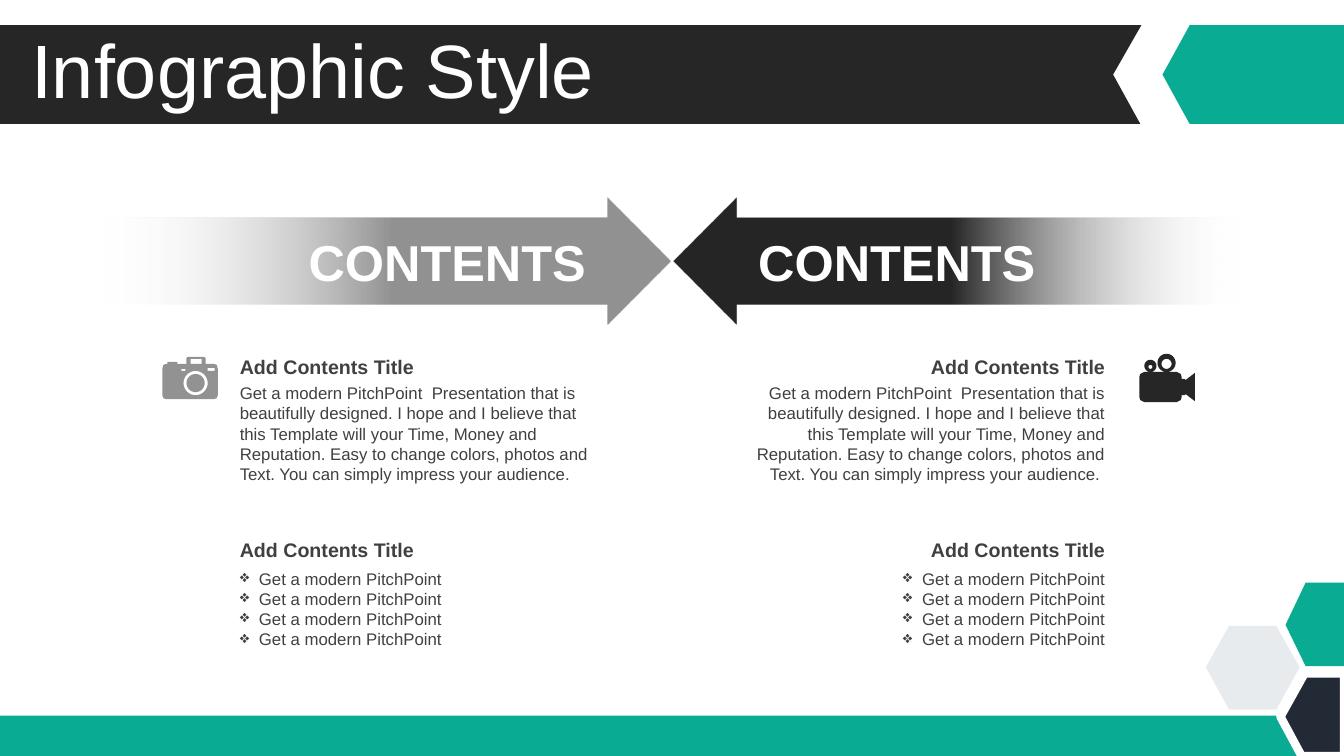
from math import cos, pi, sin
from lxml.etree import SubElement
from pptx import Presentation
from pptx.dml.color import RGBColor
from pptx.enum.shapes import MSO_SHAPE
from pptx.enum.text import MSO_ANCHOR, PP_ALIGN
from pptx.oxml.ns import qn
from pptx.util import Inches, Pt

RECT, ARROW = MSO_SHAPE.RECTANGLE, MSO_SHAPE.RIGHT_ARROW
LEFT, RIGHT = PP_ALIGN.LEFT, PP_ALIGN.RIGHT
TOP, MID, BASE = MSO_ANCHOR.TOP, MSO_ANCHOR.MIDDLE, MSO_ANCHOR.BOTTOM

HUES = {"teal": "09AB93", "dark": "262626", "gray": "929292", "white": "FFFFFF",
        "pale": "D9DEE2", "navy": "222A35", "text": "404040"}

TITLE = "Infographic Style"
LABEL = "CONTENTS"
HEAD = "Add Contents Title"
BODY = ("Get a modern PitchPoint  Presentation that is beautifully designed. "
        "I hope and I believe that this Template will your Time, Money and "
        "Reputation. Easy to change colors, photos and Text. "
        "You can simply impress your audience.")
ITEMS = ["Get a modern PitchPoint"] * 4

SIDES = [
    {"hue": "gray", "arrow": 0.67, "turn": 0, "label": 2.42, "label_al": RIGHT,
     "text": 2.28, "al": LEFT, "body": BODY},
    {"hue": "dark", "arrow": 6.68, "turn": 180, "label": 7.52, "label_al": LEFT,
     "text": 7.39, "al": RIGHT, "body": BODY + " "},
]

BANNER = [(0, 0.25), (11.32, 0.25), (11.04, 0.74), (11.31, 1.23), (0, 1.23)]
TAB = [(11.8, 0.25), (13.33, 0.25), (13.33, 1.23), (11.8, 1.23), (11.53, 0.74)]
PALE_HEX = [(11.96, 6.62), (12.19, 6.21), (12.66, 6.21), (12.89, 6.62),
            (12.66, 7.04), (12.19, 7.04)]
TEAL_HEX = [(12.95, 5.78), (13.33, 5.78), (13.33, 6.61), (12.95, 6.61), (12.75, 6.2)]
NAVY_HEX = [(13.33, 6.68), (13.33, 7.5), (12.91, 7.5), (12.7, 7.11), (12.94, 6.68)]

CAMERA = [(1.86, 3.54), (2.02, 3.54), (2.04, 3.55), (2.04, 3.61), (2.12, 3.61),
          (2.15, 3.62), (2.16, 3.66), (2.16, 3.92), (2.15, 3.95), (2.12, 3.96),
          (1.65, 3.96), (1.62, 3.95), (1.61, 3.92), (1.61, 3.66), (1.62, 3.62),
          (1.65, 3.61), (1.66, 3.61), (1.66, 3.59), (1.76, 3.59), (1.76, 3.61),
          (1.85, 3.61), (1.85, 3.55)]
WINDOWS = [(1.89, 3.56, 2.0, 3.61), (1.8, 3.66, 1.84, 3.68), (2.06, 3.65, 2.13, 3.68)]
LENS = [(1.94, 3.8, 0.12), (1.94, 3.8, 0.09)]
MOVIE = [(11.35, 3.69), (11.67, 3.69), (11.71, 3.71), (11.72, 3.74), (11.72, 3.76),
         (11.75, 3.76), (11.76, 3.77), (11.85, 3.7), (11.85, 3.98), (11.76, 3.91),
         (11.75, 3.92), (11.72, 3.92), (11.72, 3.94), (11.71, 3.97), (11.67, 3.99),
         (11.35, 3.99), (11.31, 3.97), (11.3, 3.94), (11.3, 3.74), (11.31, 3.71)]
REELS = [(11.57, 3.6, 0.09), (11.57, 3.61, 0.05), (11.41, 3.63, 0.06), (11.41, 3.64, 0.02)]

deck = Presentation()
deck.slide_width, deck.slide_height = Inches(13.33), Inches(7.5)
shapes = deck.slides.add_slide(deck.slide_layouts[6]).shapes


def rgb(hue):
    return RGBColor.from_string(HUES[hue])


def fade(shape, share):
    tint = list(shape._element.spPr.iter(qn("a:srgbClr")))[-1]
    SubElement(tint, qn("a:alpha"), val=str(share * 1000))


def paint(shape, hue):
    shape.shadow.inherit = False
    shape.fill.solid()
    shape.fill.fore_color.rgb = rgb(hue)
    shape.line.fill.background()
    return shape


def outline(hue, *rings):
    rings = [[(Inches(x), Inches(y)) for x, y in ring] for ring in rings]
    pen = shapes.build_freeform(*rings[0][0], scale=1.0)
    for ring in rings:
        pen.move_to(*ring[0])
        pen.add_line_segments(ring[1:], close=True)
    return paint(pen.convert_to_shape(), hue)


def circle(x, y, r):
    steps = 40
    return [(x + r * cos(2 * pi * i / steps), y + r * sin(2 * pi * i / steps))
            for i in range(steps)]


def box(x1, y1, x2, y2):
    return [(x1, y1), (x2, y1), (x2, y2), (x1, y2)]


def write(lines, at, size, hue="text", al=LEFT, anchor=TOP, bold=False, inset=True, mark=None):
    frame = shapes.add_textbox(*map(Inches, at)).text_frame
    frame.word_wrap, frame.vertical_anchor = True, anchor
    if not inset:
        frame.margin_left = frame.margin_right = 0
        frame.margin_top = frame.margin_bottom = 0
    frame.text = "\n".join(lines)
    for para in frame.paragraphs:
        para.alignment = al
        font = para.font
        font.name, font.size, font.bold = "Arial", Pt(size), bold
        font.color.rgb = rgb(hue)
        if mark:
            props = para._p.get_or_add_pPr()
            props.set("marL", str(Inches(0.19)))
            props.set("indent", str(-Inches(0.19)))
            bullet = SubElement(props, qn("a:buChar"), char=mark)
            props.insert(0, bullet)
    return frame


def arrow(side):
    shape = shapes.add_shape(ARROW, *map(Inches, (side["arrow"], 1.96, 5.98, 1.26)))
    shape.adjustments[0], shape.adjustments[1] = 0.682, 0.5
    shape.rotation = side["turn"]
    paint(shape, side["hue"])
    shape.fill.gradient()
    shape.fill.gradient_angle = 180
    stops = zip(shape.fill.gradient_stops, (side["hue"], "white"), (0.46, 0.94))
    for stop, hue, place in stops:
        stop.color.rgb = rgb(hue)
        stop.position = place
    fade(shape, 0)


outline("dark", BANNER)
fade(outline("pale", PALE_HEX), 60)
outline("teal", TEAL_HEX)
paint(shapes.add_shape(RECT, *map(Inches, (0, 7.1, 13.33, 0.4))), "teal")
navy = outline("navy", NAVY_HEX)
navy.line.color.rgb = rgb("white")
navy.line.width = Pt(6)
outline("teal", TAB)

title = write([TITLE], (0.21, 0.34, 10.53, 0.79), 54, "white", anchor=MID).paragraphs[0]
title.line_spacing, title.space_before = 0.9, Pt(10)

for side in SIDES:
    x, al = side["text"], side["al"]
    arrow(side)
    write([LABEL], (side["label"], 2.28, 3.39, 0.61), 36, "white", side["label_al"],
          BASE, bold=True, inset=False)
    for y in (3.47, 5.29):
        write([HEAD], (x, y, 3.67, 0.34), 14, al=al, bold=True)
    write([side["body"]], (x, 3.75, 3.67, 1.11), 12, al=al)
    write(ITEMS, (x, 5.59, 3.67, 0.91), 12, al=al, mark="❖")

outline("gray", CAMERA, *[box(*w) for w in WINDOWS], *[circle(*c) for c in LENS])
outline("dark", MOVIE, *[circle(*c) for c in REELS])

deck.save("out.pptx")
